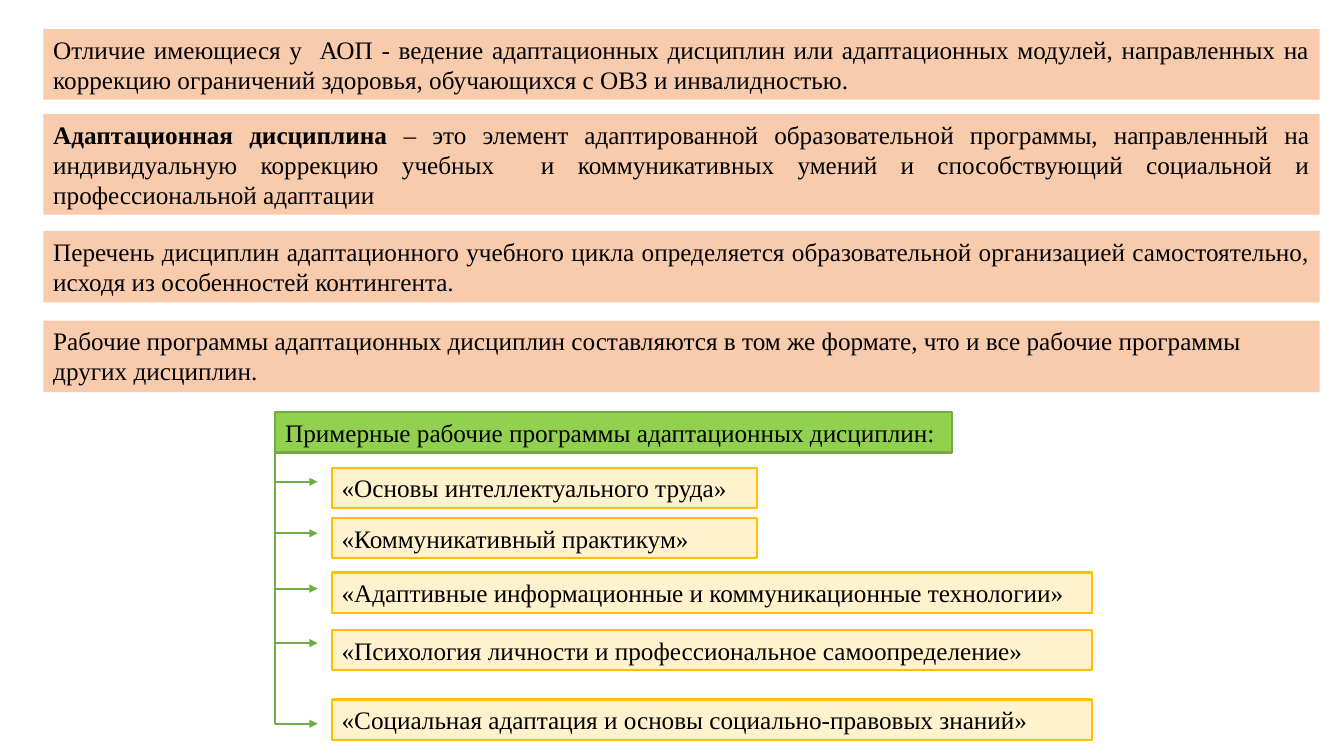
from dataclasses import dataclass

from lxml import etree
from pptx import Presentation
from pptx import util as u
from pptx.dml.color import RGBColor
from pptx.enum import shapes, text
from pptx.oxml.ns import qn


@dataclass(frozen=True)
class Theme:
    """Colours and type of the slide."""
    font: str = "Times New Roman"
    size: int = 18
    line_width: float = 1.5
    ink: str = "000000"
    peach: str = "F8CBAD"
    cream: str = "FFF2CC"
    gold: str = "FFC000"
    lime: str = "92D050"
    green: str = "70AD47"


class SlideBuilder:
    """Draws boxes and connectors on one slide in a theme."""

    def __init__(self, slide, theme):
        self.slide = slide
        self.theme = theme

    def box(self, left, top, width, height, runs, fill, outline=None,
            align=text.PP_ALIGN.LEFT):
        """Add a filled rectangle with (wording, bold) runs."""
        shape = self.slide.shapes.add_shape(
            shapes.MSO_SHAPE.RECTANGLE,
            *(u.Inches(length) for length in (left, top, width, height)))
        shape.shadow.inherit = False
        shape.fill.solid()
        shape.fill.fore_color.rgb = RGBColor.from_string(fill)
        if outline:
            shape.line.color.rgb = RGBColor.from_string(outline)
            shape.line.width = u.Pt(self.theme.line_width)
        else:
            shape.line.fill.background()
        frame = shape.text_frame
        frame.word_wrap = True
        frame.auto_size = text.MSO_AUTO_SIZE.SHAPE_TO_FIT_TEXT
        frame.vertical_anchor = text.MSO_ANCHOR.TOP
        paragraph = frame.paragraphs[0]
        paragraph.alignment = align
        paragraph.font.name = self.theme.font
        paragraph.font.size = u.Pt(self.theme.size)
        paragraph.font.color.rgb = RGBColor.from_string(self.theme.ink)
        for wording, bold in runs:
            run = paragraph.add_run()
            run.text = wording
            if bold:
                run.font.bold = True

    def connector(self, start, end, arrow=False):
        """Add a straight green line, with an arrowhead at its end if asked."""
        line = self.slide.shapes.add_connector(
            shapes.MSO_CONNECTOR.STRAIGHT,
            *(u.Inches(length) for length in (*start, *end)))
        line.line.color.rgb = RGBColor.from_string(self.theme.green)
        line.line.width = u.Pt(self.theme.line_width)
        if arrow:
            outline = line.line._get_or_add_ln()
            etree.SubElement(outline, qn("a:tailEnd"), type="triangle")
        etree.SubElement(line._element.spPr, qn("a:effectLst"))


JUSTIFY = text.PP_ALIGN.JUSTIFY
STATEMENTS = [
    (0.29, 0.7, JUSTIFY, [
        ("Отличие имеющиеся у  АОП - ведение адаптационных дисциплин или "
         "адаптационных модулей, направленных на коррекцию ограничений "
         "здоровья, обучающихся с ОВЗ и инвалидностью.", False)]),
    (1.13, 1, JUSTIFY, [
        ("Адаптационная дисциплина ", True),
        ("– это элемент адаптированной образовательной программы, "
         "направленный на индивидуальную коррекцию учебных  и "
         "коммуникативных умений и способствующий социальной и "
         "профессиональной адаптации", False)]),
    (2.29, 0.71, JUSTIFY, [
        ("Перечень дисциплин адаптационного учебного цикла определяется "
         "образовательной организацией самостоятельно, исходя из "
         "особенностей контингента.", False)]),
    (3.18, 0.71, text.PP_ALIGN.LEFT, [
        ("Рабочие программы адаптационных дисциплин составляются в том же "
         "формате, что и все рабочие программы других дисциплин.", False)]),
]
NARROW, WIDE = 4.22, 7.54
PROGRAMMES = [
    (4.64, 4.78, NARROW, "«Основы интеллектуального труда»"),
    (5.14, 5.29, NARROW, "«Коммуникативный практикум»"),
    (5.68, 5.84, WIDE,
     "«Адаптивные информационные и коммуникационные технологии»"),
    (6.25, 6.38, WIDE,
     "«Психология личности и профессиональное самоопределение»"),
    (6.94, 7.18, WIDE,
     "«Социальная адаптация и основы социально-правовых знаний»"),
]
TRUNK_X, ARROW_X, PROGRAMME_X = 2.73, 3.15, 3.29
HEADING_TOP, ROW_HEIGHT = 4.09, 0.4


def main():
    """Build the slide and save it."""
    presentation = Presentation()
    presentation.slide_width = u.Inches(13.33)
    presentation.slide_height = u.Inches(7.5)
    slide = presentation.slides.add_slide(presentation.slide_layouts[6])
    theme = Theme()
    builder = SlideBuilder(slide, theme)

    for top, height, align, runs in STATEMENTS:
        builder.box(0.43, top, 12.66, height, runs, theme.peach, align=align)

    builder.box(TRUNK_X, HEADING_TOP, 6.71, ROW_HEIGHT,
                [("Примерные рабочие программы адаптационных дисциплин:", False)],
                theme.lime, theme.green)
    last_arrow_y = PROGRAMMES[-1][1]
    builder.connector((TRUNK_X, HEADING_TOP + ROW_HEIGHT), (TRUNK_X, last_arrow_y))
    for top, arrow_y, width, title in PROGRAMMES:
        builder.box(PROGRAMME_X, top, width, ROW_HEIGHT, [(title, False)],
                    theme.cream, theme.gold)
        builder.connector((TRUNK_X, arrow_y), (ARROW_X, arrow_y), arrow=True)

    presentation.save("out.pptx")


if __name__ == "__main__":
    main()
